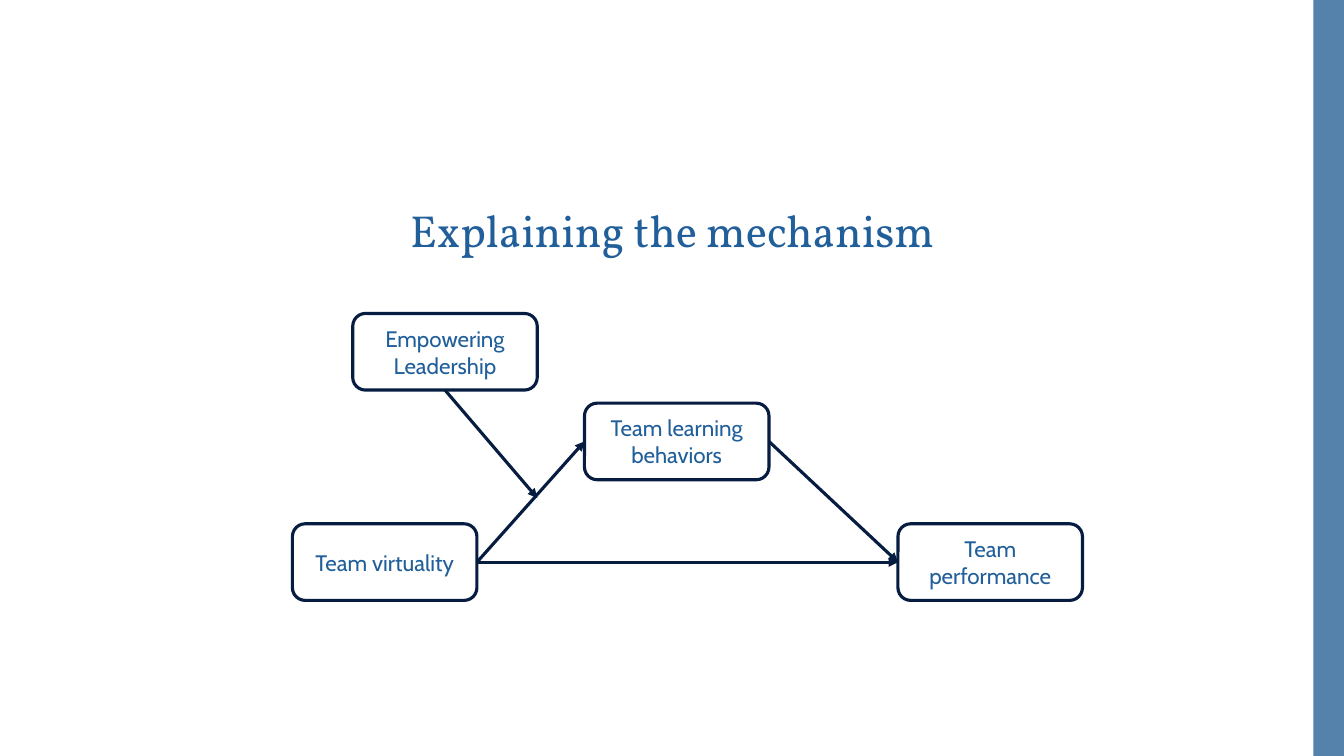
from dataclasses import dataclass

from lxml.etree import SubElement
from pptx import Presentation
from pptx.dml.color import RGBColor
from pptx.enum.shapes import MSO_CONNECTOR as Link, MSO_SHAPE as Form
from pptx.enum.text import MSO_ANCHOR as Anchor, PP_ALIGN as Align
from pptx.oxml.ns import qn
from pptx.shapes.autoshape import Shape
from pptx.shapes.connector import Connector
from pptx.slide import Slide
from pptx.util import Cm, Pt

WHITE = RGBColor(0xFF, 0xFF, 0xFF)
NAVY = RGBColor(0x06, 0x1D, 0x41)
BLUE = RGBColor(0x21, 0x5F, 0x9A)
STEEL = RGBColor(0x54, 0x82, 0xAB)

WIDE, HIGH = 33.87, 19.05
BOX_W, BOX_H = 4.65, 1.93
STROKE = Pt(2.25)

# Connection sites of a rounded box
LEFT, BOTTOM, RIGHT = 1, 2, 3


@dataclass
class Box:
    text: str
    left: float
    top: float


@dataclass
class Path:
    start: str
    site: int
    end: str


BOXES = {
    "virtual": Box("Team virtuality", 7.37, 13.2),
    "learning": Box("Team learning behaviors", 14.73, 10.16),
    "result": Box("Team performance", 22.63, 13.2),
    "leader": Box("Empowering Leadership", 8.89, 7.9),
}
PATHS = [
    Path("virtual", RIGHT, "learning"),
    Path("learning", RIGHT, "result"),
    Path("virtual", RIGHT, "result"),
]
# Point on the first path that leadership acts upon
TARGET = (13.54, 12.55)


def set_text(shape: Shape, text: str, font: str, size: float) -> None:
    frame = shape.text_frame
    frame.text = text
    frame.word_wrap = True
    frame.vertical_anchor = Anchor.MIDDLE
    line = frame.paragraphs[0]
    line.alignment = Align.CENTER
    style = line.runs[0].font
    style.name, style.size = font, Pt(size)
    style.color.rgb = BLUE


def draw_box(slide: Slide, box: Box) -> Shape:
    shape = slide.shapes.add_shape(
        Form.ROUNDED_RECTANGLE, Cm(box.left), Cm(box.top), Cm(BOX_W), Cm(BOX_H))
    shape.shadow.inherit = False
    shape.fill.solid()
    shape.fill.fore_color.rgb = WHITE
    shape.line.color.rgb = NAVY
    shape.line.width = STROKE
    set_text(shape, box.text, "Cabin", 16)
    return shape


def draw_arrow(slide: Slide, start: Shape, site: int) -> Connector:
    arrow = slide.shapes.add_connector(
        Link.STRAIGHT, 0, 0, Cm(TARGET[0]), Cm(TARGET[1]))
    arrow.begin_connect(start, site)
    arrow.line.color.rgb = NAVY
    arrow.line.width = STROKE
    SubElement(arrow.line._get_or_add_ln(), qn("a:tailEnd"), type="triangle")
    SubElement(arrow._element.spPr, qn("a:effectLst"))
    return arrow


def main() -> None:
    deck = Presentation()
    deck.slide_width, deck.slide_height = Cm(WIDE), Cm(HIGH)
    slide = deck.slides.add_slide(deck.slide_layouts[6])

    # Side bar
    bar = slide.shapes.add_shape(
        Form.RECTANGLE, Cm(33.1), 0, Cm(WIDE - 33.1), Cm(HIGH))
    bar.shadow.inherit = False
    bar.fill.solid()
    bar.fill.fore_color.rgb = STEEL
    bar.line.fill.background()

    # Model boxes
    shapes = {name: draw_box(slide, box) for name, box in BOXES.items()}

    # Paths between boxes, then the moderating arrow
    for path in PATHS:
        arrow = draw_arrow(slide, shapes[path.start], path.site)
        arrow.end_connect(shapes[path.end], LEFT)
    draw_arrow(slide, shapes["leader"], BOTTOM)

    # Title
    title = slide.shapes.add_textbox(Cm(5.97), Cm(4.04), Cm(21.95), Cm(3.68))
    set_text(title, "Explaining the mechanism", "Vollkorn", 32)
    title.text_frame.paragraphs[0].line_spacing = 0.9

    deck.save("out.pptx")


if __name__ == "__main__":
    main()
